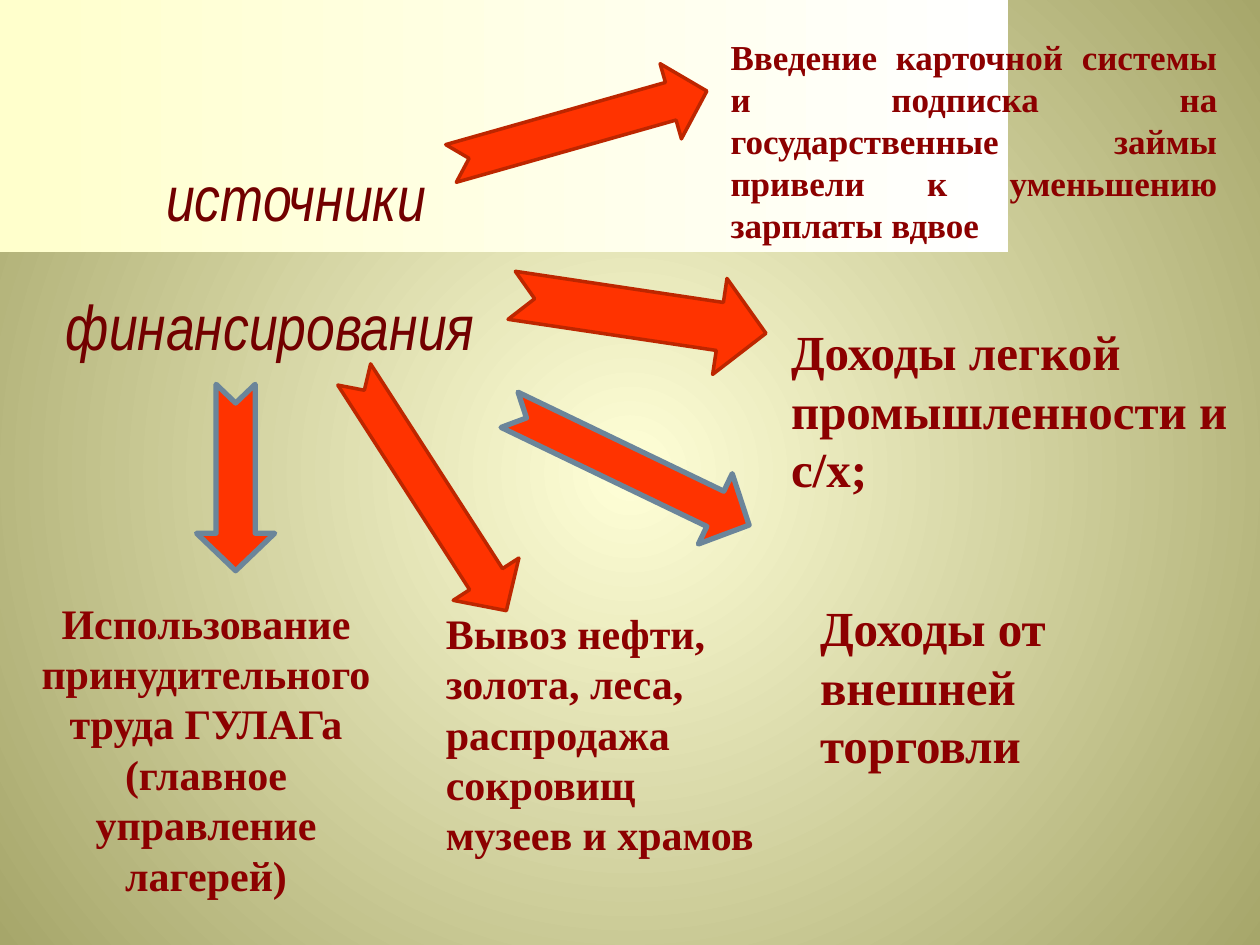
from lxml import etree
from pptx import Presentation
from pptx.dml.color import RGBColor
from pptx.enum.shapes import MSO_SHAPE as Preset
from pptx.enum.text import MSO_ANCHOR as Anchor, MSO_AUTO_SIZE as AutoSize, PP_ALIGN as Align
from pptx.oxml.ns import qn
from pptx.util import Inches, Pt

WIDTH, HEIGHT = 10, 7.5

# Content: corner panels as (points, left colour, right colour)
PANELS = [
    ([(7.78, 1.53), (0, 2.17), (0, 1.01), (7.79, 1.01), (7.78, 1.28)], "F8F8F8", "FFFFFF"),
    ([(7.92, 1.62), (0, 2.08), (0, 0), (7.92, 0)], "FFFFCC", "FFFFFF"),
]

# Arrow outlines as (colour, width)
RED_LINE, BLUE_LINE = ("BD2600", 2), ("6B859A", 3)

# Arrows: left, top, length, thickness, rotation, outline
ARROWS = [
    (3.54, 0.7, 2.11, 0.62, 344.2, RED_LINE),
    (2.3, 3.6, 2.23, 0.62, 57.2, RED_LINE),
    (4.05, 2.11, 2.04, 0.77, 8.5, RED_LINE),
    (3.94, 3.4, 2.11, 0.62, 25.7, BLUE_LINE),
    (1.13, 3.48, 1.48, 0.62, 90, BLUE_LINE),
]

# Sources of funding: text, box, size, alignment
SOURCES = [
    ("Введение карточной системы и подписка на государственные займы привели к уменьшению зарплаты вдвое",
     (5.7, 0.23, 4.06, 1.78), 20, Align.JUSTIFY),
    ("Доходы легкой промышленности и с/х;", (6.18, 2.5, 3.82, 1.51), 28, Align.LEFT),
    ("Доходы от внешней торговли", (6.41, 4.69, 3.31, 1.51), 28, Align.LEFT),
    ("Вывоз нефти, золота, леса, распродажа сокровищ музеев и храмов",
     (3.44, 4.77, 2.68, 2.12), 24, Align.LEFT),
    ("Использование принудительного труда ГУЛАГа (главное управление лагерей)",
     (0.23, 4.69, 2.81, 2.52), 24, Align.CENTER),
]

# Heading words: text, box
HEADINGS = [
    ("источники", (1.17, 1.25, 2.36, 0.62)),
    ("финансирования", (0.23, 2.27, 3.83, 0.62)),
]


def color(value):
    return RGBColor.from_string(value)


def set_gradient(fill, *values):
    fill.gradient()
    for stop, value in zip(fill.gradient_stops, values):
        stop.color.rgb = color(value)


def paint_background(slide):
    set_gradient(slide.background.fill, "FFFFD7", "A6A66A")
    gradient = slide.element.find(".//" + qn("a:gradFill"))
    gradient.remove(gradient.find(qn("a:lin")))
    circle = etree.SubElement(gradient, qn("a:path"), path="circle")
    etree.SubElement(circle, qn("a:fillToRect"), l="50000", t="50000", r="50000", b="50000")


def add_panel(slide, points, *values):
    builder = slide.shapes.build_freeform(*points[0], scale=Inches(1))
    builder.add_line_segments(points[1:], close=True)
    panel = builder.convert_to_shape()
    panel.shadow.inherit = False
    set_gradient(panel.fill, *values)
    panel.fill.gradient_angle = 0
    panel.line.fill.background()


def add_arrow(slide, left, top, length, thickness, rotation, outline):
    arrow = slide.shapes.add_shape(
        Preset.NOTCHED_RIGHT_ARROW, *map(Inches, (left, top, length, thickness)))
    arrow.rotation = rotation
    arrow.adjustments[0], arrow.adjustments[1] = 0.5, 0.48
    arrow.shadow.inherit = False
    arrow.fill.solid()
    arrow.fill.fore_color.rgb = color("FF3300")
    arrow.line.color.rgb = color(outline[0])
    arrow.line.width = Pt(outline[1])


def add_text(slide, text, box, size, align, font_name, font_color):
    frame = slide.shapes.add_textbox(*map(Inches, box)).text_frame
    frame.text = text
    paragraph = frame.paragraphs[0]
    paragraph.alignment = align
    font = paragraph.runs[0].font
    font.name, font.size = font_name, Pt(size)
    font.color.rgb = color(font_color)
    return frame, font


def main():
    presentation = Presentation()
    presentation.slide_width, presentation.slide_height = Inches(WIDTH), Inches(HEIGHT)
    slide = presentation.slides.add_slide(presentation.slide_layouts[6])

    # Backdrop
    paint_background(slide)
    for panel in PANELS:
        add_panel(slide, *panel)

    # Arrows from the heading to the sources
    for arrow in ARROWS:
        add_arrow(slide, *arrow)

    # Sources
    for source in SOURCES:
        frame, font = add_text(slide, *source, "Times New Roman", "8C0000")
        frame.word_wrap = True
        frame.auto_size = AutoSize.SHAPE_TO_FIT_TEXT
        font.bold = True

    # Heading words
    for text, box in HEADINGS:
        frame, font = add_text(slide, text, box, 36, Align.CENTER, "Arial Narrow", "720000")
        frame.word_wrap = False
        frame.vertical_anchor = Anchor.MIDDLE
        font.italic = True

    presentation.save("out.pptx")


if __name__ == "__main__":
    main()
